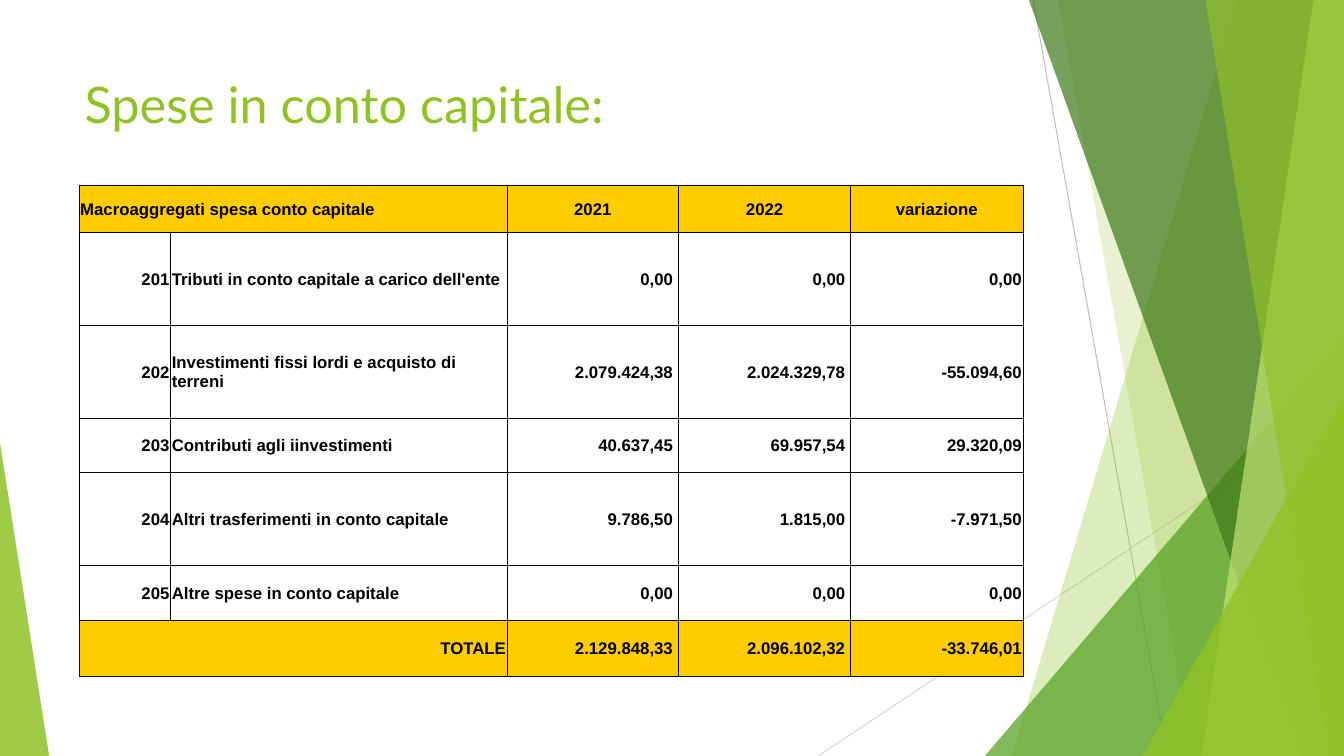
from dataclasses import dataclass

from lxml import etree
from pptx import Presentation
from pptx.dml.color import RGBColor
from pptx.enum.shapes import MSO_CONNECTOR, MSO_SHAPE
from pptx.enum.text import MSO_ANCHOR, PP_ALIGN
from pptx.oxml import parse_xml
from pptx.oxml.ns import nsdecls, qn
from pptx.util import Cm, Pt

LEFT, CENTER, RIGHT = PP_ALIGN.LEFT, PP_ALIGN.CENTER, PP_ALIGN.RIGHT
MIDDLE = MSO_ANCHOR.MIDDLE
TRIANGLE = MSO_SHAPE.ISOSCELES_TRIANGLE
STRAIGHT = MSO_CONNECTOR.STRAIGHT

PAGE_WIDTH, PAGE_HEIGHT = 33.87, 19.05
TITLE_ONLY = 5


@dataclass(frozen=True)
class Theme:
    lime: str = "90C226"
    green: str = "54A021"
    forest: str = "3F7819"
    pale: str = "C0E474"
    gold: str = "FFCC00"
    ink: str = "000000"
    line_gray: str = "BFBFBF"
    faint_gray: str = "D9D9D9"
    title_font: str = "Lato"
    table_font: str = "Arial"
    title_size: float = 36
    table_size: float = 12
    hairline: float = 0.75
    border: float = 0.5


def write(frame, text, *, font, size, color, bold=False, align=LEFT):
    para = frame.paragraphs[0]
    para.alignment = align
    span = para.add_run()
    span.text = text
    span.font.name = font
    span.font.size = Pt(size)
    span.font.bold = bold
    span.font.color.rgb = RGBColor.from_string(color)


class SlideBuilder:
    def __init__(self, page, theme):
        self.page = page
        self.theme = theme

    def title(self, text, left, top, width, height):
        box = self.page.shapes.title
        box.left, box.top, box.width, box.height = map(Cm, (left, top, width, height))
        box.text_frame.vertical_anchor = MIDDLE
        write(box.text_frame, text, font=self.theme.title_font,
              size=self.theme.title_size, color=self.theme.lime)

    def line(self, start, end, color):
        line = self.page.shapes.add_connector(STRAIGHT, *map(Cm, (*start, *end)))
        line.line.color.rgb = RGBColor.from_string(color)
        line.line.width = Pt(self.theme.hairline)
        properties = line._element.find(qn("p:spPr"))
        etree.SubElement(properties, qn("a:effectLst"))

    def paint(self, shape, color, opacity):
        shape.shadow.inherit = False
        shape.line.fill.background()
        shape.fill.solid()
        shape.fill.fore_color.rgb = RGBColor.from_string(color)
        tint = shape._element.spPr.find(qn("a:solidFill"))[0]
        etree.SubElement(tint, qn("a:alpha"), val=str(opacity * 1000))

    def facet(self, top_x, bottom_x, color, opacity):
        """Panel with a slanted left edge, reaching the right side of the page."""
        outline = self.page.shapes.build_freeform(Cm(top_x), 0)
        corners = [(PAGE_WIDTH, 0), (PAGE_WIDTH, PAGE_HEIGHT), (bottom_x, PAGE_HEIGHT)]
        outline.add_line_segments([(Cm(x), Cm(y)) for x, y in corners])
        self.paint(outline.convert_to_shape(), color, opacity)

    def triangle(self, left, top, width, apex, color, opacity):
        """Triangle standing on the bottom of the page."""
        shape = self.page.shapes.add_shape(
            TRIANGLE, *map(Cm, (left, top, width, PAGE_HEIGHT - top)))
        shape.adjustments[0] = apex
        self.paint(shape, color, opacity)

    def cell(self, cell, text, *, align, fill=None, right_gap=0.03):
        cell.vertical_anchor = MIDDLE
        cell.margin_left = cell.margin_top = Cm(0.03)
        cell.margin_right, cell.margin_bottom = Cm(right_gap), 0
        if fill:
            cell.fill.solid()
            cell.fill.fore_color.rgb = RGBColor.from_string(fill)
        else:
            cell.fill.background()
        properties = cell._tc.get_or_add_tcPr()
        for index, side in enumerate("LRTB"):
            properties.insert(index, parse_xml(
                f'<a:ln{side} {nsdecls("a")} w="{Pt(self.theme.border)}"><a:solidFill>'
                f'<a:srgbClr val="{self.theme.ink}"/></a:solidFill></a:ln{side}>'))
        if text:
            write(cell.text_frame, text, font=self.theme.table_font, bold=True,
                  size=self.theme.table_size, color=self.theme.ink, align=align)

    def table(self, rows, left, top, widths, heights):
        """First and last rows are gold, with their first two cells merged."""
        table = self.page.shapes.add_table(
            len(rows), len(widths), Cm(left), Cm(top),
            Cm(sum(widths)), Cm(sum(heights))).table
        table.first_row = table.horz_banding = False
        for column, width in zip(table.columns, widths):
            column.width = Cm(width)
        for row, height in zip(table.rows, heights):
            row.height = Cm(height)
        last = len(rows) - 1
        for r, values in enumerate(rows):
            for c, text in enumerate(values):
                if r == 0:
                    align = LEFT if c < 2 else CENTER
                else:
                    align = LEFT if c == 1 else RIGHT
                amount = r > 0 and c in (2, 3)
                self.cell(table.cell(r, c), text, align=align,
                          fill=self.theme.gold if r in (0, last) else None,
                          right_gap=0.14 if amount else 0.03)
        for r in (0, last):
            table.cell(r, 0).merge(table.cell(r, 1))


ROWS = [
    ("Macroaggregati spesa conto capitale", "", "2021", "2022", "variazione"),
    ("201", "Tributi in conto capitale a carico dell'ente", "0,00", "0,00", "0,00"),
    ("202", "Investimenti fissi lordi e acquisto di terreni",
     "2.079.424,38", "2.024.329,78", "-55.094,60"),
    ("203", "Contributi agli iinvestimenti", "40.637,45", "69.957,54", "29.320,09"),
    ("204", "Altri trasferimenti in conto capitale", "9.786,50", "1.815,00", "-7.971,50"),
    ("205", "Altre spese in conto capitale", "0,00", "0,00", "0,00"),
    ("TOTALE", "", "2.129.848,33", "2.096.102,32", "-33.746,01"),
]


def main():
    theme = Theme()
    deck = Presentation()
    deck.slide_width, deck.slide_height = Cm(PAGE_WIDTH), Cm(PAGE_HEIGHT)
    page = deck.slides.add_slide(deck.slide_layouts[TITLE_ONLY])
    builder = SlideBuilder(page, theme)

    # Decoration, from back to front
    builder.line((26.04, 0), (29.41, PAGE_HEIGHT), theme.line_gray)
    builder.line((PAGE_WIDTH, 10.24), (20.62, PAGE_HEIGHT), theme.faint_gray)
    builder.facet(31.19, 25.5, theme.lime, 30)
    builder.facet(26.67, 30.05, theme.lime, 20)
    builder.triangle(24.82, 8.46, 9.05, 1, theme.green, 72)
    builder.facet(25.93, 32.79, theme.forest, 70)
    builder.facet(33.1, 30.28, theme.pale, 70)
    builder.facet(30.38, 33.48, theme.lime, 65)
    builder.triangle(28.8, 9.98, 5.07, 1, theme.lime, 80)
    builder.triangle(0, 11.15, 1.24, 0, theme.lime, 85)

    # Title and expense table
    builder.title("Spese in conto capitale:", 1.88, 1.7, 23.88, 1.8)
    builder.table(ROWS, 1.99, 4.67, widths=[2.31, 8.48, 4.32, 4.34, 4.34],
                  heights=[1.19, 2.34, 2.34, 1.37, 2.34, 1.37, 1.42])

    deck.save("out.pptx")


if __name__ == "__main__":
    main()
